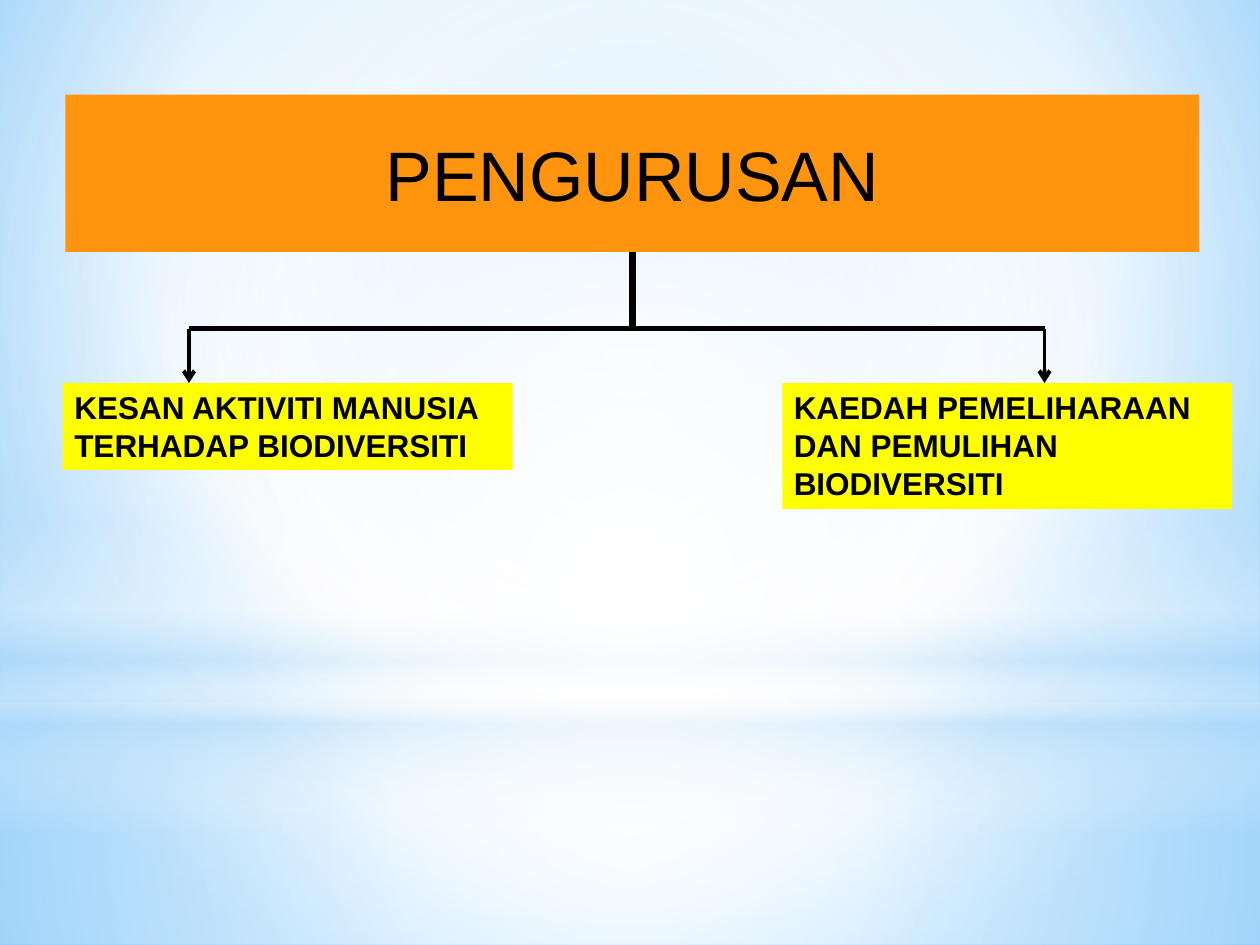
"""Build the PENGURUSAN slide: a heading that branches to two topics."""
from lxml import etree
from pptx import Presentation
from pptx.dml.color import RGBColor
from pptx.enum.shapes import MSO_CONNECTOR, MSO_SHAPE
from pptx.enum.text import MSO_ANCHOR, PP_ALIGN
from pptx.oxml.ns import qn
from pptx.util import Inches, Pt

RECT, OVAL = MSO_SHAPE.RECTANGLE, MSO_SHAPE.OVAL
LINE = MSO_CONNECTOR.STRAIGHT
LEFT, CENTER = PP_ALIGN.LEFT, PP_ALIGN.CENTER
TOP, MIDDLE = MSO_ANCHOR.TOP, MSO_ANCHOR.MIDDLE

MID = (50, 50, 50, 50)
BACK = [(0, "9ED5FF", 100), (60, "FFFFFF", 100), (100, "5BB9FF", 100)]
GLOWS = [
    (RECT, (0, 5.58, 10, 1.92), MID,
     [(0, "FFFFFF", 91), (37, "FFFFFF", 76), (100, "B4DCFA", 79)]),
    (RECT, (0, 0, 10, 5.58), MID,
     [(0, "FFFFFF", 89), (48, "FFFFFF", 62), (100, "B4DCFA", 79)]),
    (RECT, (0, 4.12, 10, 2.5), None,
     [(0, "FFFFFF", 0), (29, "FFFFFF", 30), (45, "B4DCFA", 40),
      (55, "FFFFFF", 26), (65, "B4DCFA", 60), (100, "FFFFFF", 0)]),
    (OVAL, (0, 1.75, 10, 5.58), MID,
     [(0, "FFFFFF", 100), (56, "FFFFFF", 0)]),
]
TOPIC = {"fill": "FFFF00", "size": 18, "bold": True, "align": LEFT,
         "anchor": TOP, "pad": (0.09, 0.04)}
HEAD = {"fill": "FF950E", "size": 40, "bold": False, "align": CENTER,
        "anchor": MIDDLE, "pad": (0, 0)}
BOXES = [
    ("KESAN AKTIVITI MANUSIA TERHADAP BIODIVERSITI", (0.5, 3.04, 3.57, 0.69), TOPIC),
    ("KAEDAH PEMELIHARAAN DAN PEMULIHAN BIODIVERSITI", (6.21, 3.04, 3.57, 1), TOPIC),
    ("PENGURUSAN", (0.52, 0.75, 9, 1.25), HEAD),
]
STEM, BAR, DROP = 5.02, 2.61, 3.04
ENDS = (1.5, 8.29)


def color(code):
    return RGBColor.from_string(code)


def add(node, tag, **attrs):
    return etree.SubElement(node, qn(tag), {k: str(v) for k, v in attrs.items()})


def blend(fill, node, stops, focus):
    fill.gradient()
    grad = node.find(".//" + qn("a:gradFill"))
    grad.clear()
    grad.set("rotWithShape", "1")
    group = add(grad, "a:gsLst")
    for place, code, alpha in stops:
        stop = add(group, "a:gs", pos=place * 1000)
        add(add(stop, "a:srgbClr", val=code), "a:alpha", val=alpha * 1000)
    if focus:
        route = add(grad, "a:path", path="circle")
        add(route, "a:fillToRect", **{k: v * 1000 for k, v in zip("ltrb", focus)})
    else:
        add(grad, "a:lin", ang=5400000, scaled=0)


def shape(slide, kind, place):
    item = slide.shapes.add_shape(kind, *map(Inches, place))
    item.shadow.inherit = False
    item.line.fill.background()
    return item


def box(slide, text, place, look):
    item = shape(slide, RECT, place)
    item.fill.solid()
    item.fill.fore_color.rgb = color(look["fill"])
    frame = item.text_frame
    side, edge = map(Inches, look["pad"])
    form = {"word_wrap": True, "vertical_anchor": look["anchor"],
            "margin_left": side, "margin_right": side,
            "margin_top": edge, "margin_bottom": edge}
    for name, value in form.items():
        setattr(frame, name, value)
    para = frame.paragraphs[0]
    para.alignment = look["align"]
    run = para.add_run()
    run.text = text
    form = {"name": "Arial", "size": Pt(look["size"]), "bold": look["bold"]}
    for name, value in form.items():
        setattr(run.font, name, value)
    run.font.color.rgb = color("000000")
    return item


def link(slide, start, end, width, arrow=False):
    item = slide.shapes.add_connector(LINE, *map(Inches, start + end))
    item.line.width = Pt(width)
    item.line.color.rgb = color("000000")
    if arrow:
        add(item.line._get_or_add_ln(), "a:tailEnd", type="arrow")
    add(item.element.spPr, "a:effectLst")
    return item


def main():
    deck = Presentation()
    deck.slide_width, deck.slide_height = Inches(10), Inches(7.5)
    slide = deck.slides.add_slide(deck.slide_layouts[6])
    blend(slide.background.fill, slide.element, BACK, (20, 10, 20, 60))
    for kind, place, focus, stops in GLOWS:
        glow = shape(slide, kind, place)
        blend(glow.fill, glow.element, stops, focus)
    head = [box(slide, *row) for row in BOXES][-1]
    link(slide, (STEM, 2), (STEM, BAR), 4.5).begin_connect(head, 2)
    link(slide, (ENDS[0], BAR), (ENDS[1], BAR), 3)
    for x in ENDS:
        link(slide, (x, BAR), (x, DROP), 2.25, True)
    deck.save("out.pptx")


if __name__ == "__main__":
    main()
